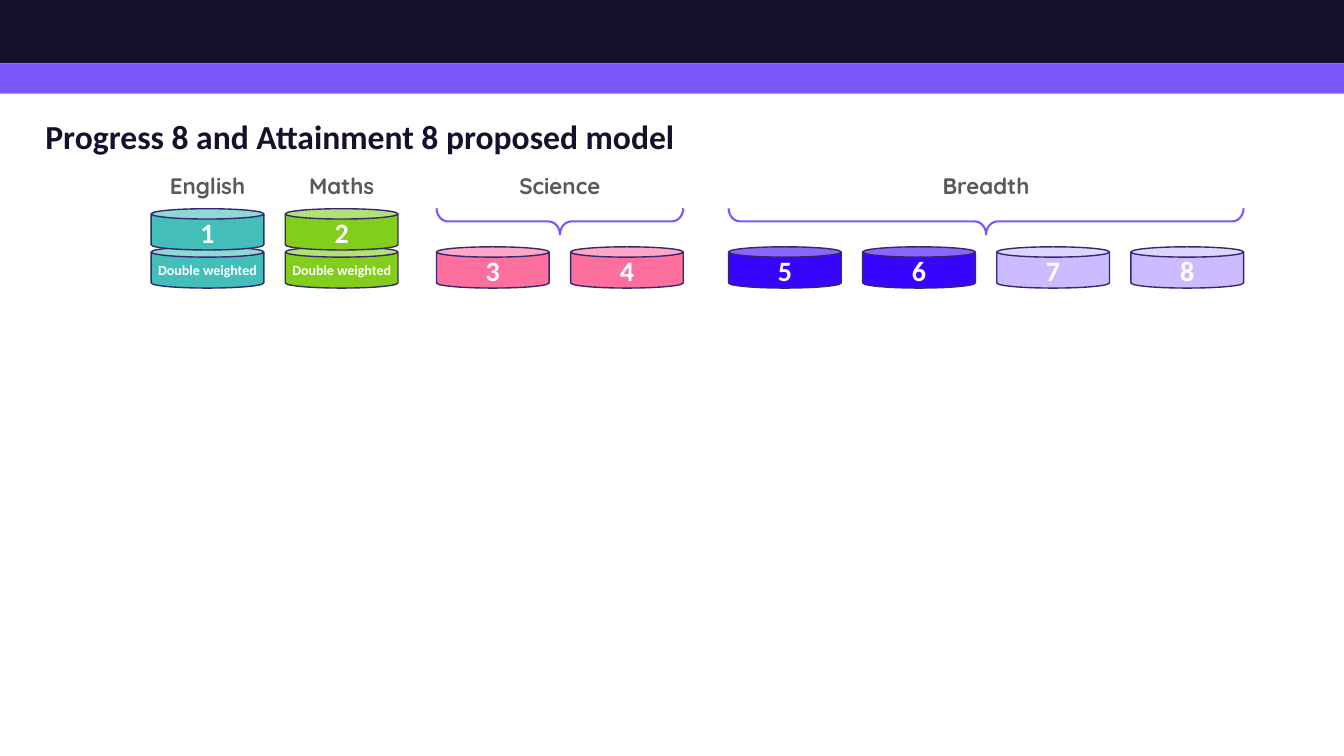
from dataclasses import dataclass

import pptx
import pptx.dml.color
import pptx.enum.shapes
import pptx.enum.text
import pptx.presentation
import pptx.shapes.autoshape
import pptx.slide
import pptx.text.text
import pptx.util

Cm = pptx.util.Cm
SHAPES = pptx.enum.shapes.MSO_SHAPE
ALIGN = pptx.enum.text.PP_ALIGN
ANCHOR = pptx.enum.text.MSO_ANCHOR
AUTO_SIZE = pptx.enum.text.MSO_AUTO_SIZE


@dataclass(frozen=True)
class Theme:
    navy: str = "16102C"
    violet: str = "7B58FC"
    outline: str = "36276E"
    grey: str = "595959"
    white: str = "FFFFFF"
    teal: str = "43BEB9"
    green: str = "82CE1A"
    pink: str = "FD6F9D"
    blue: str = "3904FB"
    lilac: str = "CABCFE"
    body_font: str = "Calibri"
    label_font: str = "Quicksand"
    title_size: int = 24
    number_size: int = 20
    label_size: int = 16
    note_size: int = 10


THEME = Theme()
SLIDE_WIDTH = 33.87
CAN_WIDTH = 2.84
CAN_HEIGHT = 1.04
CAN_PITCH = 3.38
CAN_TOP = 6.22
STACKED_TOP = 5.26
LABEL_TOP = 4.22
LABEL_HEIGHT = 0.94
BRACE_TOP = 5.25
BRACE_DEPTH = 0.66


@dataclass(frozen=True)
class Band:
    top: float
    height: float
    colour: str


@dataclass(frozen=True)
class Subject:
    name: str
    left: float
    first_number: int
    colours: tuple[str, ...]
    double_weighted: bool = False

    @property
    def width(self) -> float:
        return CAN_PITCH * (len(self.colours) - 1) + CAN_WIDTH


BANDS = (
    Band(0, 1.6, THEME.navy),
    Band(1.6, 0.76, THEME.violet),
)
SUBJECTS = (
    Subject("English", 3.81, 1, (THEME.teal,), True),
    Subject("Maths", 3.81 + CAN_PITCH, 2, (THEME.green,), True),
    Subject("Science", 11, 3, (THEME.pink,) * 2),
    Subject("Breadth", 18.36, 5, (THEME.blue,) * 2 + (THEME.lilac,) * 2),
)


def rgb(colour: str) -> pptx.dml.color.RGBColor:
    return pptx.dml.color.RGBColor.from_string(colour)


def write_text(
    frame: pptx.text.text.TextFrame,
    text: str,
    size: int,
    colour: str,
    font_name: str,
    alignment: ALIGN,
    frame_format: dict[str, object],
) -> None:
    for name, value in frame_format.items():
        setattr(frame, name, value)
    paragraph = frame.paragraphs[0]
    paragraph.alignment = alignment
    run = paragraph.add_run()
    run.text = text
    font_format = {"name": font_name, "size": pptx.util.Pt(size), "bold": True}
    for name, value in font_format.items():
        setattr(run.font, name, value)
    run.font.color.rgb = rgb(colour)


def add_band(slide: pptx.slide.Slide, band: Band) -> None:
    shape = slide.shapes.add_shape(
        SHAPES.RECTANGLE, 0, Cm(band.top), Cm(SLIDE_WIDTH), Cm(band.height)
    )
    shape.shadow.inherit = False
    shape.fill.solid()
    shape.fill.fore_color.rgb = rgb(band.colour)
    shape.line.fill.background()


def add_title(slide: pptx.slide.Slide, text: str) -> None:
    title = slide.shapes.title
    position = {"left": Cm(0.89), "top": Cm(2.79), "width": Cm(16.69), "height": Cm(1.42)}
    for name, value in position.items():
        setattr(title, name, value)
    write_text(
        title.text_frame, text, THEME.title_size, THEME.navy, THEME.body_font, ALIGN.LEFT,
        {"vertical_anchor": ANCHOR.MIDDLE, "auto_size": AUTO_SIZE.NONE, "word_wrap": True},
    )
    title.text_frame.paragraphs[0].line_spacing = 0.9


def add_can(
    slide: pptx.slide.Slide, left: float, top: float, colour: str, text: str, size: int
) -> None:
    can = slide.shapes.add_shape(
        SHAPES.CAN, Cm(left), Cm(top), Cm(CAN_WIDTH), Cm(CAN_HEIGHT)
    )
    can.shadow.inherit = False
    can.fill.solid()
    can.fill.fore_color.rgb = rgb(colour)
    can.line.color.rgb = rgb(THEME.outline)
    can.line.width = pptx.util.Pt(1)
    write_text(
        can.text_frame, text, size, THEME.white, THEME.body_font, ALIGN.CENTER,
        {
            "vertical_anchor": ANCHOR.MIDDLE, "word_wrap": True,
            "margin_left": 0, "margin_right": 0, "margin_top": 0, "margin_bottom": 0,
        },
    )


def add_label(slide: pptx.slide.Slide, subject: Subject) -> None:
    label = slide.shapes.add_textbox(
        Cm(subject.left), Cm(LABEL_TOP), Cm(subject.width), Cm(LABEL_HEIGHT)
    )
    write_text(
        label.text_frame, subject.name, THEME.label_size, THEME.grey, THEME.label_font,
        ALIGN.CENTER,
        {
            "word_wrap": True, "auto_size": AUTO_SIZE.SHAPE_TO_FIT_TEXT,
            "margin_left": Cm(0.1), "margin_right": Cm(0.1),
        },
    )


def add_brace(slide: pptx.slide.Slide, subject: Subject) -> None:
    left = subject.left + (subject.width - BRACE_DEPTH) / 2
    top = BRACE_TOP + (BRACE_DEPTH - subject.width) / 2
    brace = slide.shapes.add_shape(
        SHAPES.RIGHT_BRACE, Cm(left), Cm(top), Cm(BRACE_DEPTH), Cm(subject.width)
    )
    brace.rotation = 90
    brace.adjustments[0] = 0.44
    brace.shadow.inherit = False
    brace.fill.background()
    brace.line.color.rgb = rgb(THEME.violet)
    brace.line.width = pptx.util.Pt(1.5)


def add_subject(slide: pptx.slide.Slide, subject: Subject) -> None:
    add_label(slide, subject)
    if len(subject.colours) > 1:
        add_brace(slide, subject)
    number_top = STACKED_TOP if subject.double_weighted else CAN_TOP
    for index, colour in enumerate(subject.colours):
        left = subject.left + index * CAN_PITCH
        if subject.double_weighted:
            add_can(slide, left, CAN_TOP, colour, "Double weighted", THEME.note_size)
        number = str(subject.first_number + index)
        add_can(slide, left, number_top, colour, number, THEME.number_size)


def main() -> None:
    presentation = pptx.Presentation()
    presentation.slide_width = Cm(SLIDE_WIDTH)
    presentation.slide_height = Cm(19.05)
    slide = presentation.slides.add_slide(presentation.slide_layouts.get_by_name("Title Only"))
    for band in BANDS:
        add_band(slide, band)
    add_title(slide, "Progress 8 and Attainment 8 proposed model")
    for subject in SUBJECTS:
        add_subject(slide, subject)
    presentation.save("out.pptx")


if __name__ == "__main__":
    main()
